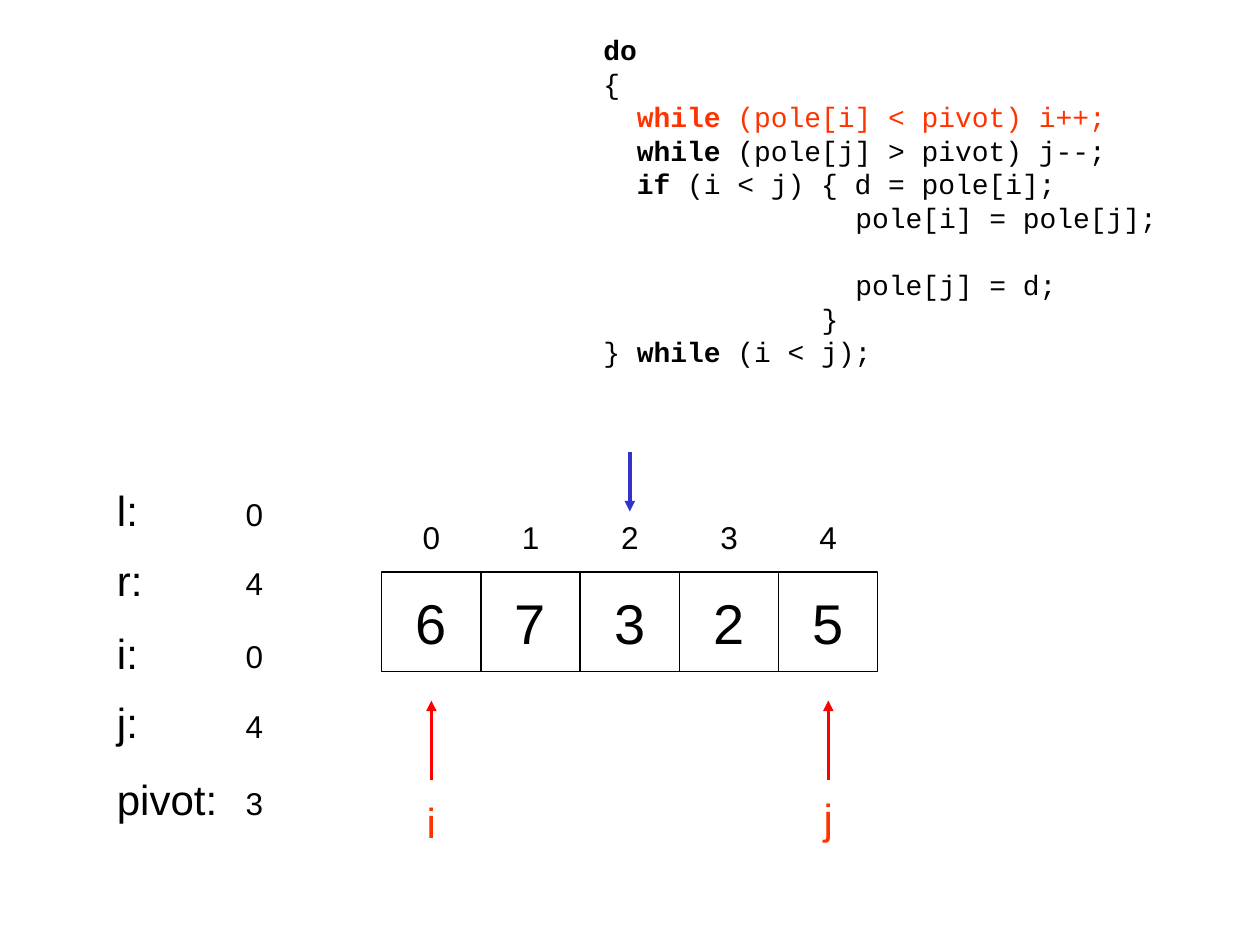
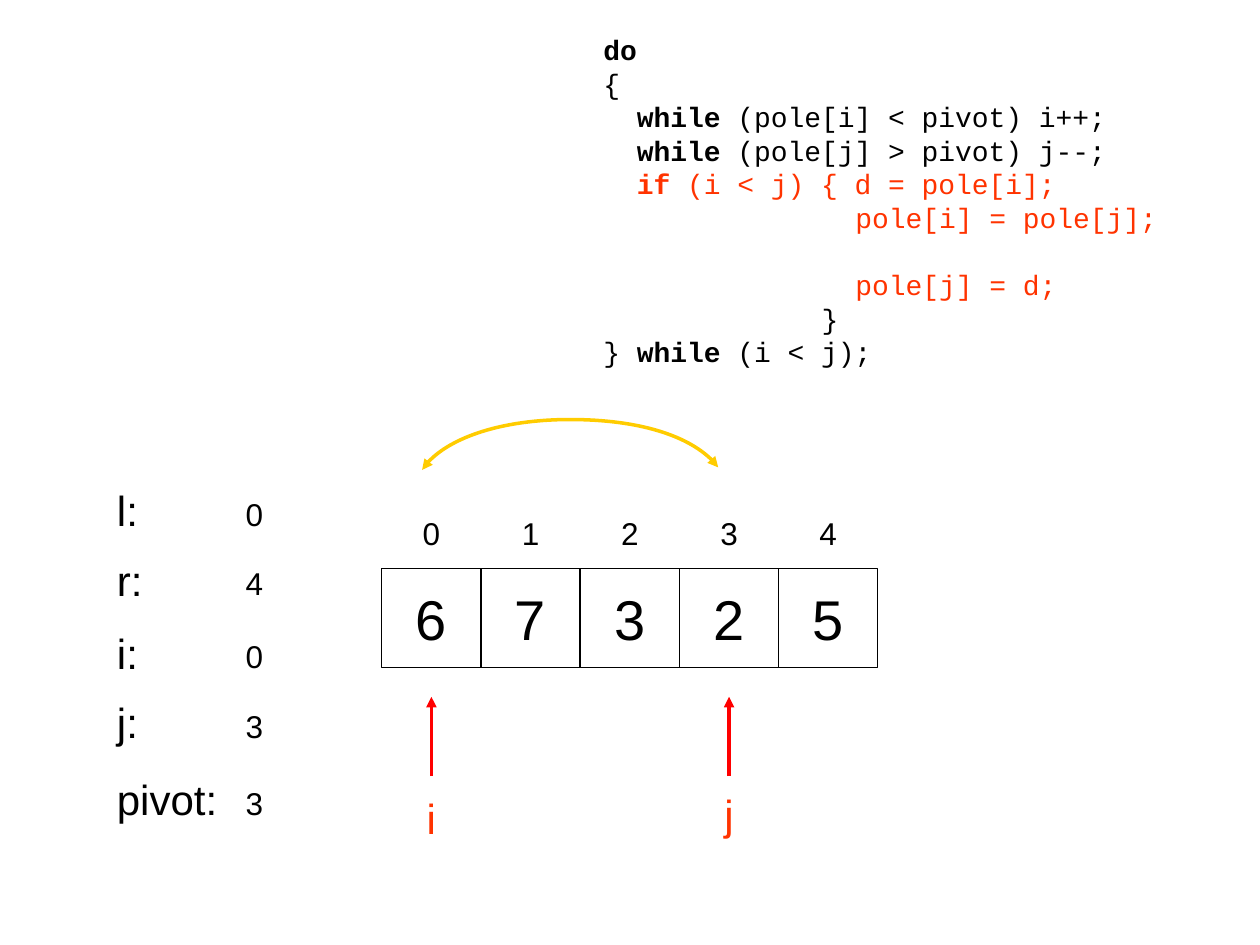
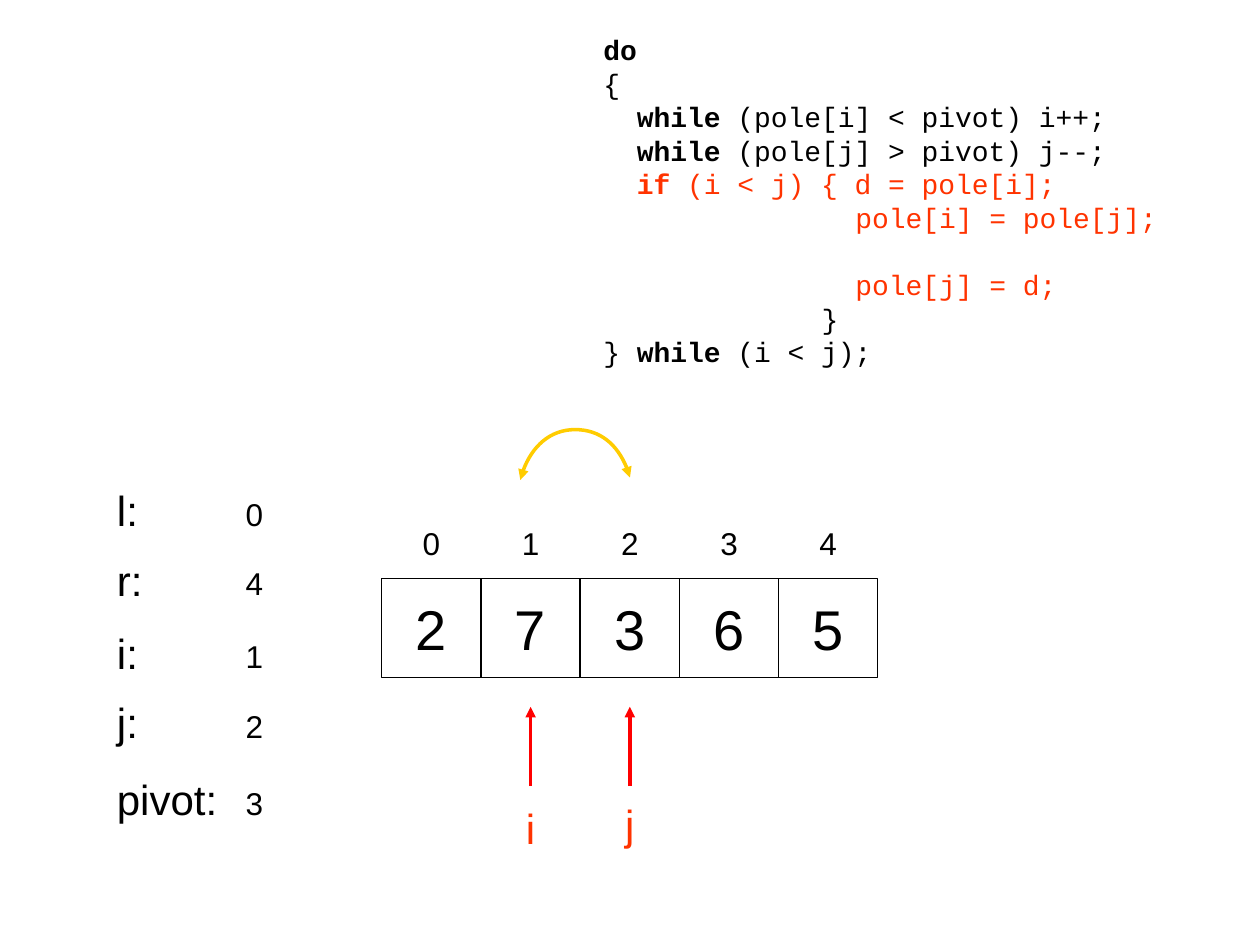
from lxml.etree import SubElement
from pptx import Presentation
from pptx.dml.color import RGBColor
from pptx.enum.shapes import MSO_CONNECTOR, MSO_SHAPE
from pptx.enum.text import MSO_ANCHOR, PP_ALIGN
from pptx.oxml.ns import qn
from pptx.util import Inches, Pt

BLACK, ORANGE, RED, BLUE, GOLD = "000000", "FF3300", "FF0000", "3333CC", "FFCC00"
LINE_HEIGHT = 1.2
CODE_SIZE = 16
CODE_CHARACTER = 0.6 * CODE_SIZE
CELL = 3.15 / 4
ARRAY_LEFT = 3.03

CODE = [
    (0, "|do|"),
    (0, "{"),
    (2, "|while| (pole[i] < pivot) i++;"),
    (2, "|while| (pole[j] > pivot) j--;"),
    (2, "|if| (i < j) { d = pole[i];"),
    (15, "pole[i] = pole[j];"),
    (15, "pole[j] = d;"),
    (13, "}"),
    (0, "} |while| (i < j);"),
]
LINE_AFTER_GAP = 6
VARIABLE_ROWS = {"l": 3.8, "r": 4.35, "i": 4.93, "j": 5.48, "pivot": 6.09}
CURVE = [(0, 0.4), (0.06, 0.17), (0.27, 0), (0.5, 0), (0.73, 0), (0.93, 0.15), (1, 0.38)]

STEPS = [
    {"array": "67325", "top": 4.54, "i": 0, "j": 4, "active": [2], "swap": None},
    {"array": "67325", "top": 4.51, "i": 0, "j": 3, "active": [4, 5, 6], "swap": (3.35, 2.35)},
    {"array": "27365", "top": 4.59, "i": 1, "j": 2, "active": [4, 5, 6], "swap": (4.13, 0.87)},
]


def write(slide, text, left, top, width, height, size, color=BLACK, align=PP_ALIGN.LEFT, framed=False):
    area = [Inches(length) for length in (left, top, width, height)]
    if framed:
        box = slide.shapes.add_shape(MSO_SHAPE.RECTANGLE, *area)
        box.shadow.inherit = False
        box.fill.background()
        box.line.color.rgb = RGBColor.from_string(BLACK)
        box.line.width = Pt(0.75)
    else:
        box = slide.shapes.add_textbox(*area)
    frame = box.text_frame
    frame.word_wrap = not framed
    frame.vertical_anchor = MSO_ANCHOR.MIDDLE if framed else MSO_ANCHOR.TOP
    frame.text = text
    para = frame.paragraphs[0]
    para.alignment = align
    para.line_spacing = Pt(LINE_HEIGHT * size)
    font = para.runs[0].font
    font.name = "Arial"
    font.size = Pt(size)
    font.color.rgb = RGBColor.from_string(color)


def style_arrow(shape, color, ends):
    shape.line.color.rgb = RGBColor.from_string(color)
    shape.line.width = Pt(2)
    properties = shape._element.spPr
    for end in ends:
        SubElement(properties.find(qn("a:ln")), qn("a:" + end), type="triangle")
    SubElement(properties, qn("a:effectLst"))


deck = Presentation()
deck.slide_width = Inches(10)
deck.slide_height = Inches(7.5)

for step in STEPS:
    slide = deck.slides.add_slide(deck.slide_layouts[6])
    top = step["top"]

    for index, number in enumerate(step["array"]):
        left = ARRAY_LEFT + index * CELL
        write(slide, number, left, top, CELL, CELL, 32, align=PP_ALIGN.CENTER, framed=True)
        write(slide, str(index), left, top - 0.48, CELL, 0.39, 18, align=PP_ALIGN.CENTER)

    arrows = [(step[name], top + 1.65, top + 1.02, RED) for name in "ij"]
    if step["swap"] is None:
        arrows.append((2, top - 0.95, top - 0.48, BLUE))
    for index, start, end, color in arrows:
        center = Inches(ARRAY_LEFT + (index + 0.5) * CELL)
        arrow = slide.shapes.add_connector(MSO_CONNECTOR.STRAIGHT, center, Inches(start), center, Inches(end))
        style_arrow(arrow, color, ["tailEnd"])

    for name, drop in (("i", 1.73), ("j", 1.7)):
        left = ARRAY_LEFT + (step[name] + 0.5) * CELL - 0.235
        write(slide, name, left, top + drop, 0.47, 0.5, 24, ORANGE, PP_ALIGN.CENTER)

    if step["swap"]:
        left, width = step["swap"]
        points = [(Inches(left + x * width), Inches(top - 1.18 + y)) for x, y in CURVE]
        builder = slide.shapes.build_freeform(*points[0])
        builder.add_line_segments(points[1:], close=False)
        swap = builder.convert_to_shape()
        outline = next(swap._element.iter(qn("a:path")))
        segments = outline.findall(qn("a:lnTo"))
        for first in (0, 3):
            bend = SubElement(outline, qn("a:cubicBezTo"))
            for segment in segments[first:first + 3]:
                bend.append(segment[0])
                outline.remove(segment)
        swap.fill.background()
        style_arrow(swap, GOLD, ["headEnd", "tailEnd"])

    values = {"l": 0, "r": 4, "i": step["i"], "j": step["j"], "pivot": 3}
    for name, row in VARIABLE_ROWS.items():
        write(slide, name + ":", 0.83, row, 1.1, 0.5, 24)
        write(slide, str(values[name]), 1.85, row + 0.08, 0.39, 0.4, 18)

    frame = slide.shapes.add_textbox(Inches(4.69), Inches(0.21), Inches(5), Inches(2.51)).text_frame
    frame.word_wrap = True
    for number, (indent, line) in enumerate(CODE):
        para = frame.add_paragraph() if number else frame.paragraphs[0]
        para.line_spacing = Pt(LINE_HEIGHT * CODE_SIZE)
        if number == LINE_AFTER_GAP:
            para.space_before = Pt(LINE_HEIGHT * CODE_SIZE)
        layout = para._p.get_or_add_pPr()
        layout.set("marL", str(Pt(indent * CODE_CHARACTER)))
        layout.set("indent", "0")
        for part, text in enumerate(line.split("|")):
            if text:
                span = para.add_run()
                span.text = text
                span.font.name = "Courier New"
                span.font.size = Pt(CODE_SIZE)
                span.font.bold = part % 2 == 1
                span.font.color.rgb = RGBColor.from_string(ORANGE if number in step["active"] else BLACK)

deck.save("out.pptx")
